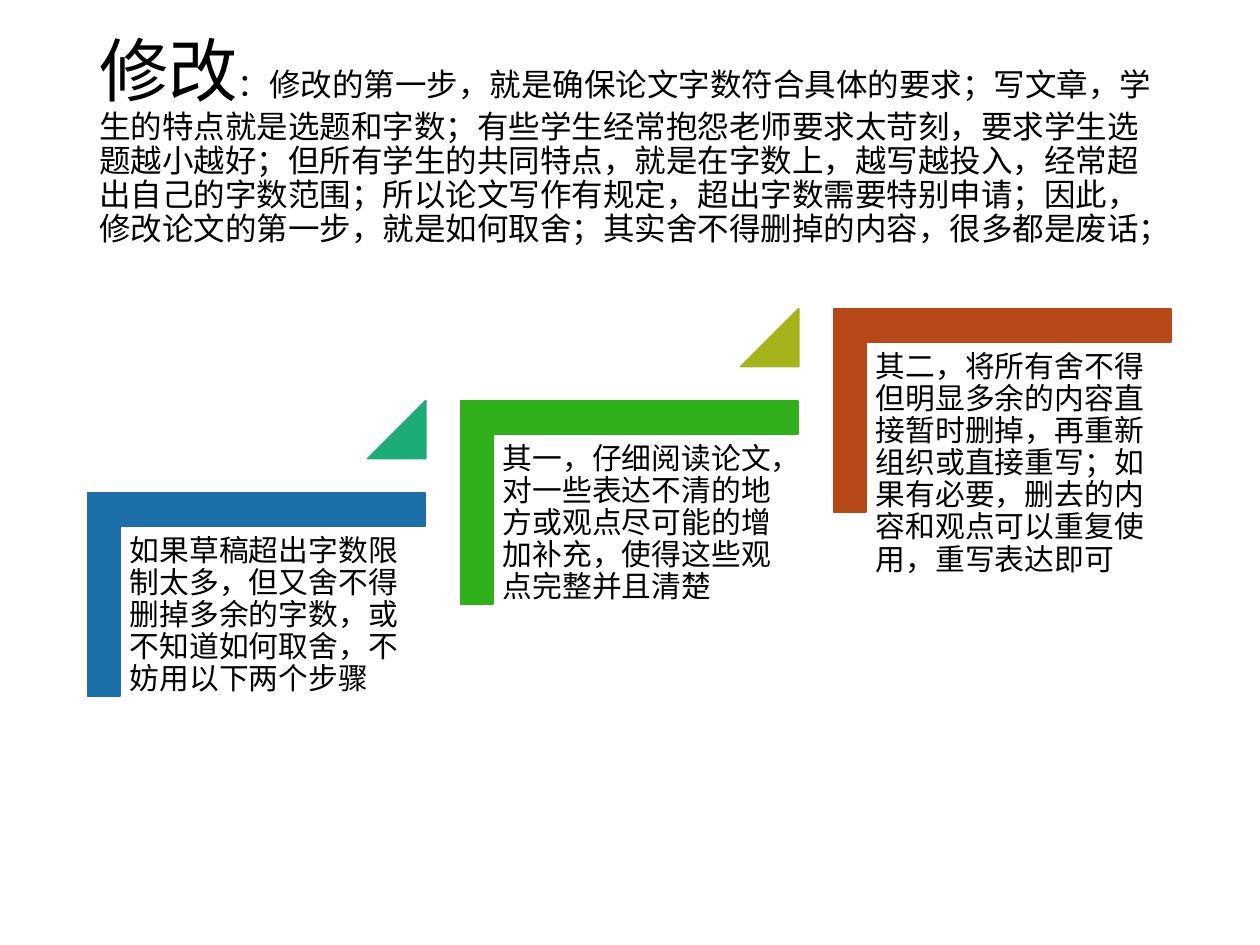
from dataclasses import dataclass

from pptx import Presentation
from pptx.dml.color import RGBColor
from pptx.enum.shapes import MSO_SHAPE
from pptx.enum.text import MSO_ANCHOR, PP_ALIGN
from pptx.util import Inches, Pt

CORNER = MSO_SHAPE.CORNER
TRIANGLE = MSO_SHAPE.ISOSCELES_TRIANGLE
TOP, MIDDLE = MSO_ANCHOR.TOP, MSO_ANCHOR.MIDDLE
LEFT = PP_ALIGN.LEFT

COLORS = {
    "text": "000000",
    "blue": "1D6FA9",
    "teal": "1CAC78",
    "green": "30B01B",
    "olive": "A7B31A",
    "rust": "B74919",
}
FONT = "Times New Roman"
STEP_LEFT, STEP_TOP = 1.23, 3.38
STEP_RIGHT, STEP_RISE = 2.96, 0.73


@dataclass(frozen=True)
class Box:
    left: float
    top: float
    width: float
    height: float

    def lengths(self) -> list:
        return [Inches(v) for v in (self.left, self.top, self.width, self.height)]


@dataclass(frozen=True)
class Step:
    wording: str
    corner_color: str
    triangle_color: str | None = None


STEPS = [
    Step("如果草稿超出字数限制太多，但又舍不得删掉多余的字数，或不知道如何取舍，不妨用以下两个步骤",
         "blue", "teal"),
    Step("其一，仔细阅读论文，对一些表达不清的地方或观点尽可能的增加补充，使得这些观点完整并且清楚",
         "green", "olive"),
    Step("其二，将所有舍不得但明显多余的内容直接暂时删掉，再重新组织或直接重写；"
         "如果有必要，删去的内容和观点可以重复使用，重写表达即可", "rust"),
]
HEADING = [
    ("修改", 39.6),
    ("：修改的第一步，就是确保论文字数符合具体的要求；写文章，学生的特点就是选题和字数；"
     "有些学生经常抱怨老师要求太苛刻，要求学生选题越小越好；但所有学生的共同特点，"
     "就是在字数上，越写越投入，经常超出自己的字数范围；所以论文写作有规定，"
     "超出字数需要特别申请；因此，修改论文的第一步，就是如何取舍；"
     "其实舍不得删掉的内容，很多都是废话；", 18),
]


def apply_format(target, values: dict) -> None:
    for name, value in values.items():
        setattr(target, name, value)


def add_text(slide, box: Box, runs: list[tuple[str, float]], anchor,
             side_inset: float, end_inset: float) -> None:
    frame = slide.shapes.add_textbox(*box.lengths()).text_frame
    apply_format(frame, {
        "word_wrap": True,
        "vertical_anchor": anchor,
        "margin_left": Inches(side_inset),
        "margin_right": Inches(side_inset),
        "margin_top": Inches(end_inset),
        "margin_bottom": Inches(end_inset),
    })
    paragraph = frame.paragraphs[0]
    apply_format(paragraph, {"line_spacing": 0.9, "alignment": LEFT})
    for wording, size in runs:
        run = paragraph.add_run()
        run.text = wording
        apply_format(run.font, {"name": FONT, "size": Pt(size)})
        run.font.color.rgb = RGBColor.from_string(COLORS["text"])


def add_solid(slide, kind, box: Box, color: str,
              adjustments: list[float], rotation: float = 0) -> None:
    solid = slide.shapes.add_shape(kind, *box.lengths())
    solid.rotation = rotation
    solid.shadow.inherit = False
    for index, value in enumerate(adjustments):
        solid.adjustments[index] = value
    rgb = RGBColor.from_string(COLORS[color])
    solid.fill.solid()
    solid.fill.fore_color.rgb = rgb
    solid.line.color.rgb = rgb
    solid.line.width = Pt(1)


def add_step(slide, step: Step, index: int) -> None:
    left = STEP_LEFT + index * STEP_RIGHT
    top = STEP_TOP - index * STEP_RISE
    add_solid(slide, CORNER, Box(left, top, 1.61, 2.68), step.corner_color,
              [0.16, 0.16], 90)
    add_text(slide, Box(left - 0.27, top + 0.8, 2.42, 2.12),
             [(step.wording, 17)], TOP, 0.07, 0.07)
    if step.triangle_color:
        add_solid(slide, TRIANGLE, Box(left + 1.69, top - 0.2, 0.46, 0.46),
                  step.triangle_color, [1])


def main() -> None:
    deck = Presentation()
    apply_format(deck, {"slide_width": Inches(10), "slide_height": Inches(7.5)})
    slide = deck.slides.add_slide(deck.slide_layouts[6])
    add_text(slide, Box(0.69, 0.4, 8.62, 1.45), HEADING, MIDDLE, 0.1, 0.05)
    for index, step in enumerate(STEPS):
        add_step(slide, step, index)
    deck.save("out.pptx")


if __name__ == "__main__":
    main()
